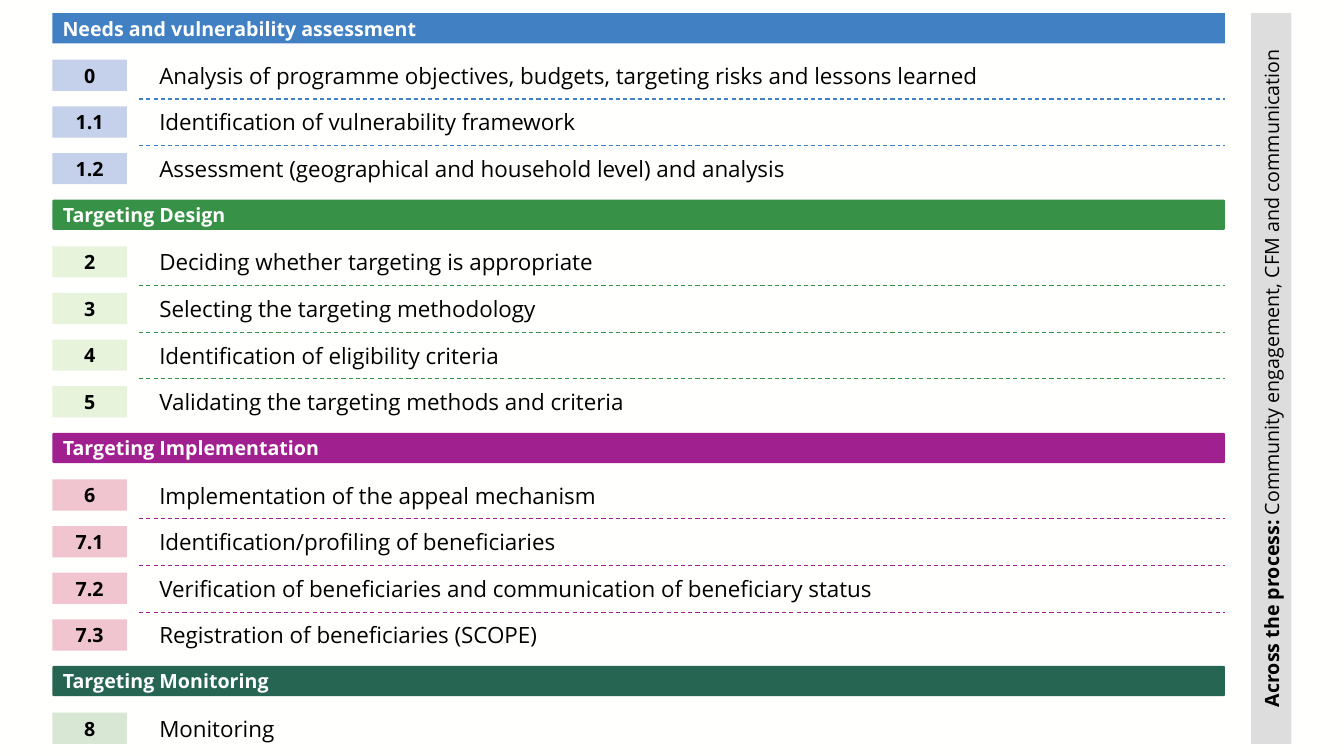
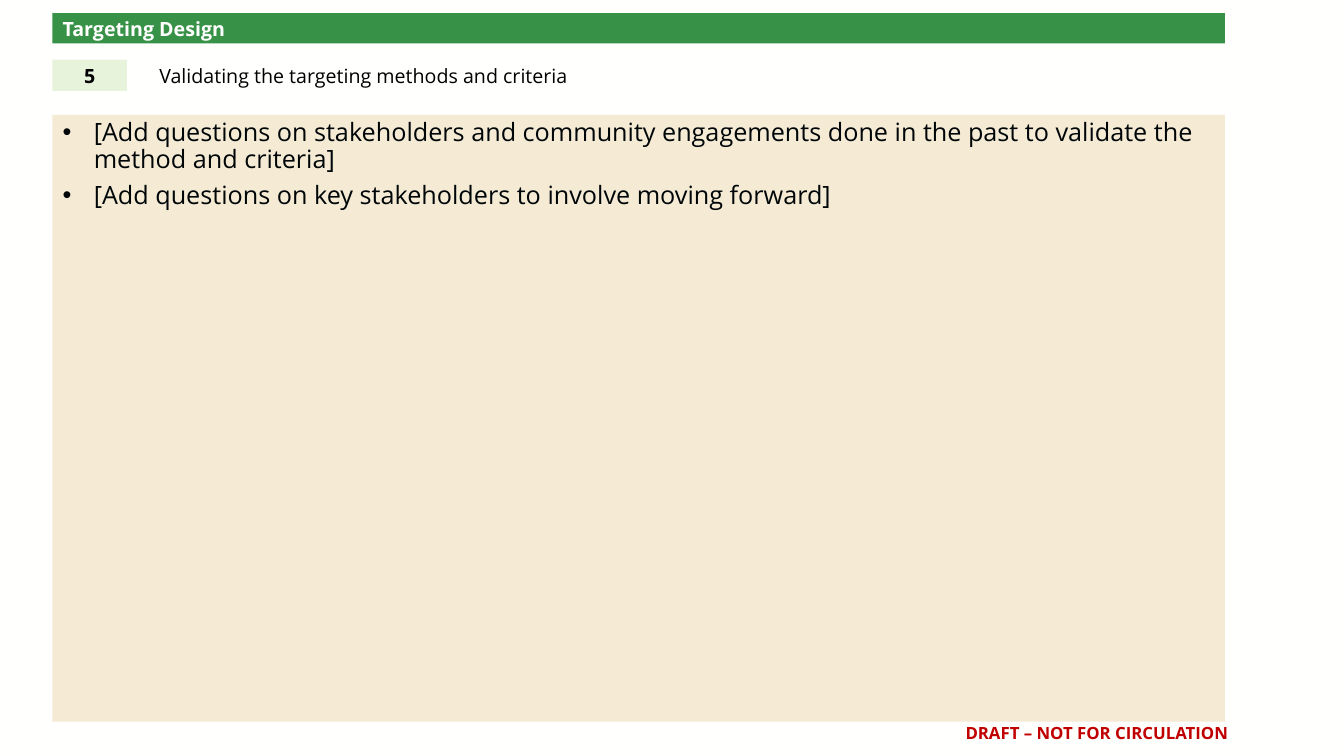
from dataclasses import dataclass
from lxml.etree import SubElement
from pptx import Presentation
from pptx.dml.color import RGBColor
from pptx.enum.dml import MSO_LINE
from pptx.enum.shapes import MSO_CONNECTOR, MSO_SHAPE
from pptx.enum.text import MSO_ANCHOR, MSO_AUTO_SIZE, PP_ALIGN
from pptx.oxml.ns import qn
from pptx.util import Inches, Pt


@dataclass(frozen=True)
class Theme:
    font: str = "Open Sans"
    back: str = "FFFFFE"
    ink: str = "000000"
    white: str = "FFFFFF"
    side: str = "DDDDDD"
    panel: str = "F5EBD5"
    panel_ink: str = "000608"
    draft: str = "C00000"
    label: int = 14
    step: int = 16
    body: int = 18
    note: int = 12


@dataclass(frozen=True)
class Box:
    x: float
    y: float
    w: float
    h: float

    def lengths(self):
        return [Inches(v) for v in (self.x, self.y, self.w, self.h)]


@dataclass(frozen=True)
class Phase:
    name: str
    color: str
    tint: str
    steps: tuple


T = Theme()
MAIN = Box(0.52, 0.13, 11.63, 7.25)
SIDE = Box(12.41, 0.13, 0.4, 7.25)
PITCH = (7.07 - MAIN.y) / 15
BAND_H = 0.3
ROW_H = 0.31
CHIP_W = 0.74
STEP_X = 0.86
STEP_W = 8.71
RULE_Y = 0.39
CORNER = 0.05

DESIGN = Phase("Targeting Design", "379247", "E8F3DC", (
    ("2", "Deciding whether targeting is appropriate"),
    ("3", "Selecting the targeting methodology"),
    ("4", "Identification of eligibility criteria"),
    ("5", "Validating the targeting methods and criteria"),
))
PHASES = (
    Phase("Needs and vulnerability assessment", "4180C3", "C5D0EA", (
        ("0", "Analysis of programme objectives, budgets, targeting risks and lessons learned"),
        ("1.1", "Identification of vulnerability framework"),
        ("1.2", "Assessment (geographical and household level) and analysis"),
    )),
    DESIGN,
    Phase("Targeting Implementation", "A0208F", "F1C5CF", (
        ("6", "Implementation of the appeal mechanism"),
        ("7.1", "Identification/profiling of beneficiaries"),
        ("7.2", "Verification of beneficiaries and communication of beneficiary status"),
        ("7.3", "Registration of beneficiaries (SCOPE)"),
    )),
    Phase("Targeting Monitoring", "266551", "D7E7D3", (("8", "Monitoring"),)),
)
QUESTIONS = (
    "[Add questions on stakeholders and community engagements done in the past "
    "to validate the method and criteria]",
    "[Add questions on key stakeholders to involve moving forward]",
)


def paint(fill, color):
    fill.solid()
    fill.fore_color.rgb = RGBColor.from_string(color)


def add_run(p, text, size, color=T.ink, bold=False):
    r = p.add_run()
    r.text = text
    r.font.name, r.font.size, r.font.bold = T.font, Pt(size), bold
    r.font.color.rgb = RGBColor.from_string(color)


def set_frame(sp, anchor=MSO_ANCHOR.MIDDLE, align=PP_ALIGN.LEFT):
    tf = sp.text_frame
    tf.word_wrap = True
    tf.auto_size = MSO_AUTO_SIZE.NONE
    tf.vertical_anchor = anchor
    tf.paragraphs[0].alignment = align
    return tf


def add_block(slide, box, color, kind=MSO_SHAPE.RECTANGLE):
    sp = slide.shapes.add_shape(kind, *box.lengths())
    sp.shadow.inherit = False
    paint(sp.fill, color)
    sp.line.fill.background()
    return sp


def add_text(slide, box, text, size, color=T.ink, bold=False, align=PP_ALIGN.LEFT):
    sp = slide.shapes.add_textbox(*box.lengths())
    tf = set_frame(sp, align=align)
    add_run(tf.paragraphs[0], text, size, color, bold)
    return tf


def place(sp, box):
    sp.left, sp.top, sp.width, sp.height = box.lengths()


def add_band(slide, box, phase, is_title):
    if is_title:
        sp = slide.shapes.title
        place(sp, box)
        geom = SubElement(sp.element.spPr, qn("a:prstGeom"), prst="roundRect")
        guides = SubElement(geom, qn("a:avLst"))
        SubElement(guides, qn("a:gd"), name="adj", fmla=f"val {round(CORNER * 100000)}")
        paint(sp.fill, phase.color)
    else:
        sp = add_block(slide, box, phase.color, MSO_SHAPE.ROUNDED_RECTANGLE)
        sp.adjustments[0] = CORNER
    tf = set_frame(sp)
    add_run(tf.paragraphs[0], phase.name, T.label, T.white, True)


def add_step(slide, box, step, tint, size):
    number, text = step
    chip = add_block(slide, Box(box.x, box.y, CHIP_W, box.h), tint)
    tf = set_frame(chip, align=PP_ALIGN.CENTER)
    add_run(tf.paragraphs[0], number, T.label, bold=True)
    tf = add_text(slide, Box(box.x + STEP_X, box.y, STEP_W, box.h), text, size)
    tf.margin_left = Inches(0.2)


def add_rule(slide, box, color):
    y = Inches(box.y + RULE_Y)
    line = slide.shapes.add_connector(
        MSO_CONNECTOR.STRAIGHT, Inches(box.x + STEP_X), y, Inches(box.x + box.w), y)
    line.line.color.rgb = RGBColor.from_string(color)
    line.line.width = Pt(0.75)
    line.line.dash_style = MSO_LINE.DASH
    SubElement(line.element.spPr, qn("a:effectLst"))


def add_phase(slide, box, phase, is_title, steps, size):
    add_band(slide, Box(box.x, box.y, box.w, BAND_H), phase, is_title)
    for i, step in enumerate(steps, 1):
        row = Box(box.x, box.y + i * PITCH, box.w, ROW_H)
        add_step(slide, row, step, phase.tint, size)
        if i < len(steps):
            add_rule(slide, row, phase.color)


def add_side_bar(slide, box):
    sp = add_block(slide, box, T.side)
    tf = set_frame(sp, align=PP_ALIGN.CENTER)
    tf._txBody.bodyPr.set("vert", "vert270")
    p = tf.paragraphs[0]
    add_run(p, "Across the process:", T.label, bold=True)
    add_run(p, " Community engagement, CFM and communication", T.label)


def add_questions(slide, box, questions):
    sp = slide.placeholders[1]
    place(sp, box)
    paint(sp.fill, T.panel)
    tf = set_frame(sp, MSO_ANCHOR.TOP)
    for i, text in enumerate(questions):
        p = tf.paragraphs[0] if i == 0 else tf.add_paragraph()
        pPr = p._p.get_or_add_pPr()
        pPr.set("marL", str(Inches(0.31)))
        pPr.set("indent", str(-Inches(0.31)))
        SubElement(pPr, qn("a:buFont"), typeface="Arial")
        SubElement(pPr, qn("a:buChar"), char="•")
        p.line_spacing = 0.9
        p.space_before = Pt(0)
        p.space_after = Pt(6)
        add_run(p, text, T.body, T.panel_ink)


def build_overview(prs):
    slide = prs.slides.add_slide(prs.slide_layouts[5])
    y = MAIN.y
    for phase in PHASES:
        span = PITCH * (len(phase.steps) + 1)
        box = Box(MAIN.x, y, MAIN.w, span)
        add_phase(slide, box, phase, phase is PHASES[0], phase.steps, T.step)
        y += span
    add_side_bar(slide, SIDE)


def build_step_page(prs, phase, step, questions):
    slide = prs.slides.add_slide(prs.slide_layouts[1])
    add_phase(slide, MAIN, phase, True, (step,), T.label)
    add_questions(slide, Box(MAIN.x, 1.14, MAIN.w, 6.02), questions)
    add_text(slide, Box(9.33, 7.16, 3.1, 0.23), "DRAFT – NOT FOR CIRCULATION",
             T.note, T.draft, True, PP_ALIGN.CENTER)


def main():
    prs = Presentation()
    prs.slide_width, prs.slide_height = Inches(13.33), Inches(7.5)
    paint(prs.slide_master.background.fill, T.back)
    build_overview(prs)
    build_step_page(prs, DESIGN, DESIGN.steps[-1], QUESTIONS)
    prs.save("out.pptx")


if __name__ == "__main__":
    main()
